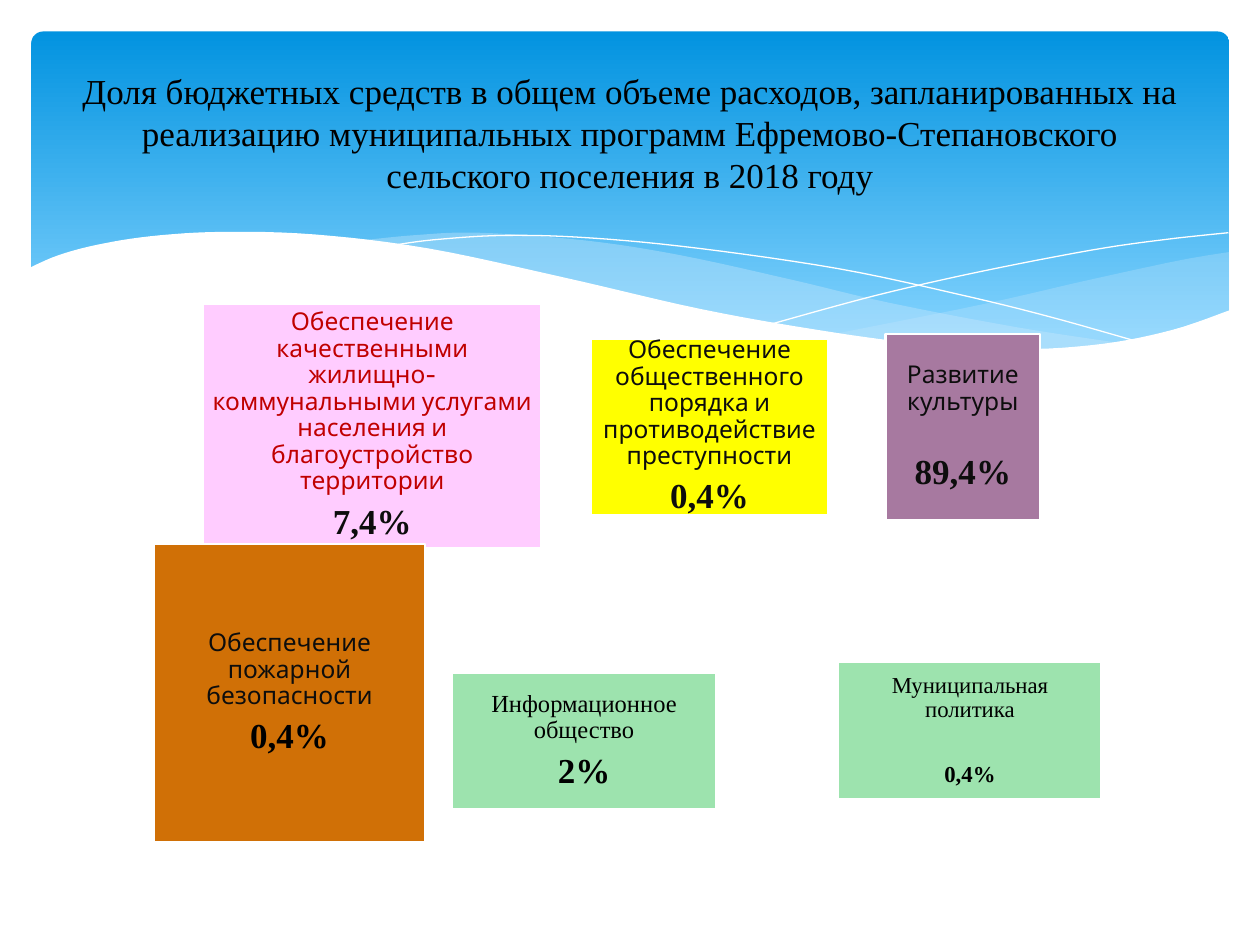
from lxml.etree import SubElement
from pptx import Presentation
from pptx.dml.color import RGBColor
from pptx.enum.shapes import MSO_SHAPE
from pptx.enum.text import MSO_ANCHOR, PP_ALIGN
from pptx.oxml.ns import qn
from pptx.util import Pt

BLACK = RGBColor(0x00, 0x00, 0x00)
DARK = RGBColor(0x0D, 0x0D, 0x0D)
WHITE = RGBColor(0xFF, 0xFF, 0xFF)
RED = RGBColor(0xC0, 0x00, 0x00)
PINK = RGBColor(0xFF, 0xCC, 0xFF)
YELLOW = RGBColor(0xFF, 0xFF, 0x00)
PLUM = RGBColor(0xA7, 0x79, 0xA0)
ORANGE = RGBColor(0xD0, 0x70, 0x06)
GREEN = RGBColor(0x9D, 0xE3, 0xAE)
SKY_TOP = RGBColor(0x02, 0x93, 0xE0)
SKY_BOTTOM = RGBColor(0x83, 0xD3, 0xFE)
PALE_BLUE = RGBColor(0xC6, 0xE7, 0xFC)

SERIF, SANS = "Times New Roman", "Cabin"

TITLE = ("Доля бюджетных средств в общем объеме расходов, запланированных на "
         "реализацию муниципальных программ Ефремово-Степановского "
         "сельского поселения в 2018 году")

# programme, share, box (left, top, width, height), fill,
# (font, size, colour) of the name, (size, colour) of the share, gap between them
PROGRAMMES = [
    ("Обеспечение качественными жилищно-коммунальными услугами населения "
     "и благоустройство территории", "7,4%", (116, 173.5, 193.5, 139.5), PINK,
     (SANS, 14, RED), (20, DARK), 5),
    ("Обеспечение общественного порядка и противодействие преступности", "0,4%",
     (337.5, 193.5, 136, 101), YELLOW, (SANS, 14, DARK), (20, DARK), 5),
    ("Развитие культуры", "89,4%", (506, 191, 88.5, 106), PLUM,
     (SANS, 14, DARK), (20, DARK), 22),
    ("Обеспечение пожарной безопасности", "0,4%", (88, 311, 155, 170.5), ORANGE,
     (SANS, 14, DARK), (20, BLACK), 5),
    ("Информационное общество", "2%", (258.5, 384.5, 150.5, 78), GREEN,
     (SERIF, 14, BLACK), (20, BLACK), 5),
    ("Муниципальная политика", "0,4%", (479, 378.5, 150.5, 78), GREEN,
     (SERIF, 13, BLACK), (13, BLACK), 23),
]

# Each band is a chain of smooth edges that meet at corners: (edges, colour, opacity %)
RIGHT_BAND = [
    [(702.5, 144), (673, 149), (620, 160.5), (561, 174), (476, 191)],
    [(476, 191), (518, 195), (554, 199), (586, 200), (621, 198), (657, 192),
     (702.5, 178)],
]
MIDDLE_BAND = [
    [(643, 196.5), (581, 187), (508, 173), (453, 160), (389.5, 146), (335, 137.5),
     (273.5, 133), (236, 134.5), (206, 137.5)],
    [(206, 137.5), (261, 146), (323, 160), (407.5, 178.5), (468, 190), (530, 198),
     (581, 200), (643, 196.5)],
]
WHITE_WAVE = [
    [(17, 153), (33, 146), (55, 140), (86, 135), (127, 132.5), (180, 134),
     (245, 142), (322, 158.5), (400, 176.5), (467, 188.5), (523, 196),
     (582, 199.5), (630, 196.5), (670, 188.5), (703.5, 177)],
    [(703.5, 237), (17, 237)],
]
THIN_CURVES = [
    [(222.5, 140.5), (248, 137), (289, 134.5), (338, 136), (400, 142),
     (479, 153.5), (547, 168), (598, 180.5), (653, 196)],
    [(441.5, 185), (500, 169), (559, 155.5), (623.5, 143), (665, 137), (702, 133)],
]


def smooth(knots, steps=6):
    """Return points on a Catmull-Rom curve through the knots."""
    padded = [knots[0], *knots, knots[-1]]
    points = [knots[0]]
    for a, b, c, d in zip(padded, padded[1:], padded[2:], padded[3:]):
        for step in range(1, steps + 1):
            t = step / steps
            points.append(tuple(
                (2 * q + (r - p) * t + (2 * p - 5 * q + 4 * r - s) * t ** 2
                 + (3 * q - p - 3 * r + s) * t ** 3) / 2
                for p, q, r, s in zip(a, b, c, d)))
    return points


def add_curve(shapes, edges, close):
    points = [(Pt(x), Pt(y)) for edge in edges for x, y in smooth(edge)]
    builder = shapes.build_freeform(*points[0])
    builder.add_line_segments(points[1:], close=close)
    curve = builder.convert_to_shape()
    curve.shadow.inherit = False
    return curve


def add_band(shapes, edges, color, opacity=100):
    band = add_curve(shapes, edges, close=True)
    band.fill.solid()
    band.fill.fore_color.rgb = color
    band.line.fill.background()
    if opacity < 100:
        rgb = band.element.spPr.find(qn("a:solidFill")).find(qn("a:srgbClr"))
        SubElement(rgb, qn("a:alpha")).set("val", str(opacity * 1000))


def add_header(shapes):
    sky = shapes.add_shape(MSO_SHAPE.ROUNDED_RECTANGLE,
                           Pt(18), Pt(18), Pt(684.5), Pt(194.5))
    sky.adjustments[0] = 0.034
    sky.shadow.inherit = False
    sky.line.fill.background()
    sky.fill.gradient()
    sky.fill.gradient_angle = 270
    for stop, position, color in zip(sky.fill.gradient_stops, (0, 0.9),
                                     (SKY_TOP, SKY_BOTTOM)):
        stop.position = position
        stop.color.rgb = color
    add_band(shapes, RIGHT_BAND, PALE_BLUE, 29)
    add_band(shapes, MIDDLE_BAND, PALE_BLUE, 40)
    for knots in THIN_CURVES:
        curve = add_curve(shapes, [knots], close=False)
        curve.fill.background()
        curve.line.color.rgb = WHITE
        curve.line.width = Pt(0)
    add_band(shapes, WHITE_WAVE, WHITE)


def format_text(paragraph, font_name, size, color, bold=False):
    paragraph.alignment = PP_ALIGN.CENTER
    font = paragraph.runs[0].font
    font.name, font.size, font.bold = font_name, Pt(size), bold
    font.color.rgb = color


def add_programme(shapes, name, share, box, fill, name_style, share_style, gap):
    tile = shapes.add_shape(MSO_SHAPE.RECTANGLE, *map(Pt, box))
    tile.shadow.inherit = False
    tile.fill.solid()
    tile.fill.fore_color.rgb = fill
    tile.line.color.rgb = WHITE
    tile.line.width = Pt(1.25)

    frame = tile.text_frame
    frame.word_wrap = True
    frame.vertical_anchor = MSO_ANCHOR.MIDDLE
    frame.margin_left = frame.margin_right = Pt(4)
    frame.margin_top = frame.margin_bottom = Pt(4)
    frame.text = f"{name}\n{share}"
    name_line, share_line = frame.paragraphs
    format_text(name_line, *name_style)
    format_text(share_line, SERIF, *share_style, bold=True)
    name_line.line_spacing = share_line.line_spacing = 0.9
    name_line.space_after = Pt(gap)


def main():
    deck = Presentation()
    deck.slide_width, deck.slide_height = Pt(720), Pt(540)
    slide = deck.slides.add_slide(deck.slide_layouts[5])
    shapes = slide.shapes

    add_header(shapes)
    for programme in PROGRAMMES:
        add_programme(shapes, *programme)

    title = shapes.title
    title.left, title.top, title.width, title.height = map(Pt, (36, 26.5, 648, 98.5))
    title.text_frame.text = TITLE
    title.text_frame.word_wrap = True
    title.text_frame.vertical_anchor = MSO_ANCHOR.MIDDLE
    format_text(title.text_frame.paragraphs[0], SERIF, 20, BLACK)
    title.element.getparent().append(title.element)  # in front of the header

    deck.save("out.pptx")


if __name__ == "__main__":
    main()
